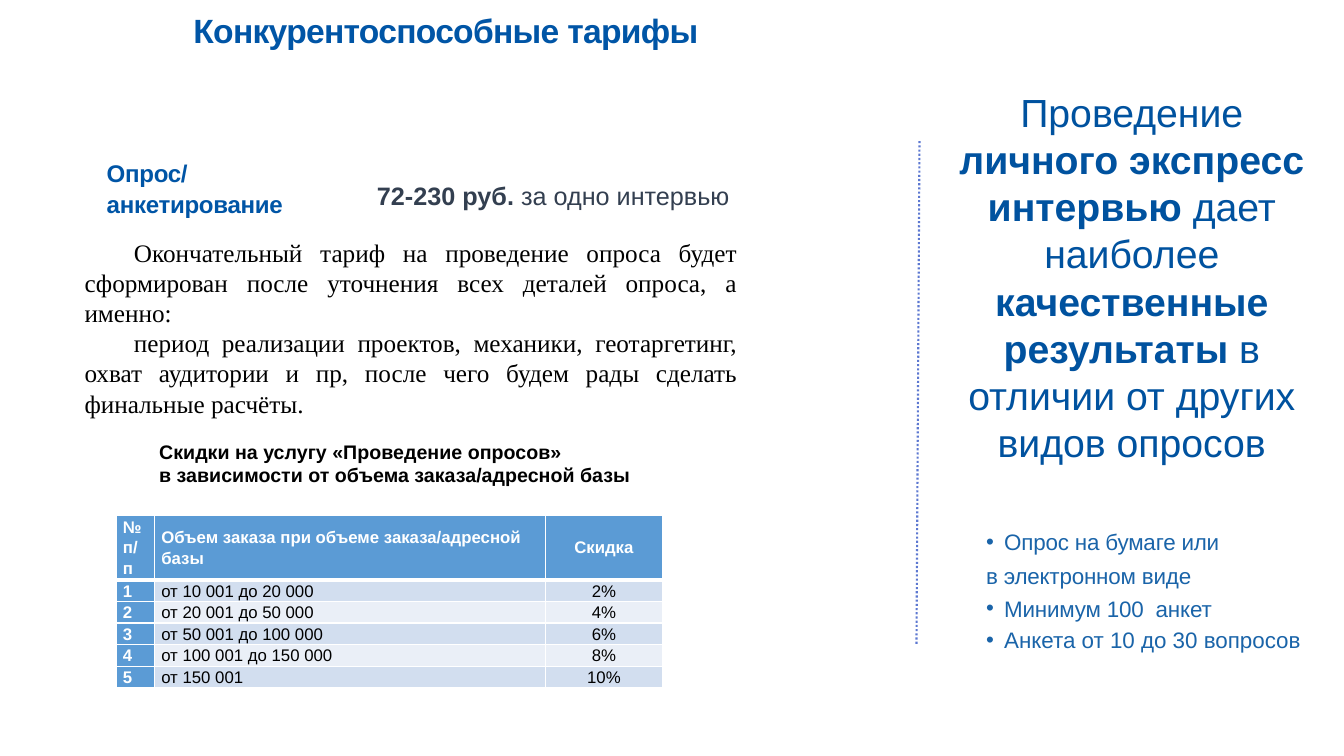
import pptx
import pptx.dml.color
import pptx.enum.dml
import pptx.enum.shapes
import pptx.enum.text
import pptx.oxml
import pptx.oxml.ns
import pptx.util
from dataclasses import dataclass

Inches = pptx.util.Inches
Pt = pptx.util.Pt
ALIGN = pptx.enum.text.PP_ALIGN
ANCHOR = pptx.enum.text.MSO_ANCHOR
NAMESPACE = pptx.oxml.ns.nsdecls("a")


@dataclass(frozen=True)
class Theme:
    sans: str = "Arial"
    serif: str = "Times New Roman"
    heading: str = "0055A6"
    claim: str = "00529F"
    bullet: str = "1A64A9"
    price: str = "333F50"
    ink: str = "000000"
    white: str = "FFFFFF"
    divider: str = "5D78D1"
    table_head: str = "5B9BD5"
    bands: tuple = ("D2DEEF", "EAEFF7")
    title_size: float = 24
    claim_size: float = 28
    body_size: float = 18
    service_size: float = 17.2
    bullet_size: float = 16
    caption_size: float = 14
    table_size: float = 12


def write(para, text, *, size, color, font=Theme.sans, bold=False, align=None,
          line=None, before=0, indent=0, first=0, bullet=False, tracking=0):
    """Fill a paragraph with a string or a list of (text, bold) spans."""
    properties = para._p.get_or_add_pPr()
    properties.set("marL", str(Inches(indent)))
    properties.set("indent", str(Inches(first)))
    if bullet:
        properties.append(pptx.oxml.parse_xml(f'<a:buFont {NAMESPACE} typeface="Arial"/>'))
        properties.append(pptx.oxml.parse_xml(f'<a:buChar {NAMESPACE} char="•"/>'))
    para.alignment = align
    para.line_spacing = line
    para.space_before = Pt(before)
    spans = [(text, bold)] if isinstance(text, str) else text
    for words, heavy in spans:
        span = para.add_run()
        span.text = words
        span.font.name = font
        span.font.size = Pt(size)
        span.font.bold = heavy
        span.font.color.rgb = pptx.dml.color.RGBColor.from_string(color)
        if tracking:
            span.font._element.set("spc", str(round(tracking * 100)))


class SlideBuilder:
    def __init__(self, slide, theme):
        self.slide = slide
        self.theme = theme

    def text(self, left, top, width, height, paragraphs, anchor=ANCHOR.TOP,
             margins=(0.1, 0.05), **style):
        """Each paragraph is its text, or a pair of text and own format."""
        box = self.slide.shapes.add_textbox(
            Inches(left), Inches(top), Inches(width), Inches(height))
        frame = box.text_frame
        frame.word_wrap = True
        frame.vertical_anchor = anchor
        frame.margin_left = frame.margin_right = Inches(margins[0])
        frame.margin_top = frame.margin_bottom = Inches(margins[1])
        for index, item in enumerate(paragraphs):
            para = frame.add_paragraph() if index else frame.paragraphs[0]
            text, own = item if isinstance(item, tuple) else (item, {})
            write(para, text, **{**style, **own})

    def dotted_line(self, start, end, color, width):
        line = self.slide.shapes.add_connector(
            pptx.enum.shapes.MSO_CONNECTOR.STRAIGHT,
            *(Inches(value) for value in (*start, *end)))
        line.line.color.rgb = pptx.dml.color.RGBColor.from_string(color)
        line.line.width = Pt(width)
        line.line.dash_style = pptx.enum.dml.MSO_LINE.ROUND_DOT
        line._element.spPr.append(pptx.oxml.parse_xml(f"<a:effectLst {NAMESPACE}/>"))

    def table(self, left, top, columns, heights, rows):
        table = self.slide.shapes.add_table(
            len(rows), len(columns), Inches(left), Inches(top),
            Inches(sum(columns)), Inches(sum(heights))).table
        for column, width in zip(table.columns, columns):
            column.width = Inches(width)
        for row, height in zip(table.rows, heights):
            row.height = Inches(height)
        for row, values in enumerate(rows):
            for column, value in enumerate(values):
                self.cell(table.cell(row, column), row, column, value)

    def cell(self, cell, row, column, value):
        theme = self.theme
        head = row == 0 or column == 0
        fill = theme.table_head if head else theme.bands[(row - 1) % 2]
        cell.fill.solid()
        cell.fill.fore_color.rgb = pptx.dml.color.RGBColor.from_string(fill)
        cell.vertical_anchor = ANCHOR.MIDDLE
        cell.margin_left = cell.margin_right = Inches(0.07)
        cell.margin_top = cell.margin_bottom = 0
        write(cell.text_frame.paragraphs[0], value, size=theme.table_size,
              color=theme.white if head else theme.ink, bold=head, line=1.07,
              align=ALIGN.CENTER if column == 2 else ALIGN.LEFT)
        # White borders, thicker under the header row
        widths = {"L": 1, "R": 1, "T": 3 if row == 1 else 1, "B": 3 if row == 0 else 1}
        properties = cell._tc.get_or_add_tcPr()
        for index, (side, width) in enumerate(widths.items()):
            properties.insert(index, pptx.oxml.parse_xml(
                f'<a:ln{side} {NAMESPACE} w="{Pt(width)}"><a:solidFill>'
                f'<a:srgbClr val="{theme.white}"/></a:solidFill></a:ln{side}>'))


def main():
    deck = pptx.Presentation()
    deck.slide_width, deck.slide_height = Inches(13.33), Inches(7.5)
    theme = Theme()
    page = SlideBuilder(deck.slides.add_slide(deck.slide_layouts[6]), theme)

    # Title
    page.text(1.82, 0.14, 10.82, 0.36, ["Конкурентоспособные тарифы"],
              anchor=ANCHOR.MIDDLE, size=theme.title_size, color=theme.heading,
              bold=True, line=0.9, tracking=-0.5)

    # Service and its price
    page.text(0.95, 1.53, 2.35, 0.69,
              ["Опрос/", ("анкетирование", {"before": 2.2})],
              size=theme.service_size, color=theme.heading, bold=True,
              line=Pt(19.9), indent=0.45, first=-0.44, tracking=-0.2)
    page.text(3.64, 1.74, 5.71, 0.4,
              [[("72-230 руб.", True), (" за одно интервью", False)]],
              size=theme.body_size, color=theme.price)

    # Tariff terms
    page.text(0.74, 2.3, 6.67, 1.92, [
        "Окончательный тариф на проведение опроса будет сформирован после "
        "уточнения всех деталей опроса, а именно:",
        "период реализации проектов, механики, геотаргетинг, охват аудитории "
        "и пр, после чего будем рады сделать финальные расчёты.",
    ], size=theme.body_size, color=theme.ink, font=theme.serif,
        align=ALIGN.JUSTIFY, first=0.49)

    # Discount table
    page.text(0.99, 4.32, 5.51, 0.55, [
        "Скидки на услугу «Проведение опросов»",
        "в зависимости от объема заказа/адресной базы",
    ], anchor=ANCHOR.MIDDLE, size=theme.caption_size, color=theme.ink,
        bold=True, first=0.49)
    page.table(1.15, 5.11, [0.38, 3.88, 1.16], [0.64] + [0.21] * 5, [
        ("№ п/п", "Объем заказа при объеме заказа/адресной базы", "Скидка"),
        ("1", "от 10 001 до 20 000", "2%"),
        ("2", "от 20 001 до 50 000", "4%"),
        ("3", "от 50 001 до 100 000", "6%"),
        ("4", "от 100 001 до 150 000", "8%"),
        ("5", "от 150 001", "10%"),
    ])

    # Divider and main claim
    page.dotted_line((9.12, 1.4), (9.09, 6.39), theme.divider, 1.5)
    page.text(9.29, 0.83, 3.87, 4.34, [[
        ("Проведение ", False),
        ("личного экспресс интервью ", True),
        ("дает наиболее ", False),
        ("качественные результаты", True),
        (" в отличии от других видов опросов", False),
    ]], size=theme.claim_size, color=theme.claim, align=ALIGN.CENTER)

    # Survey conditions
    item = {"indent": 0.19, "first": -0.18, "bullet": True}
    page.text(9.77, 5.23, 3.38, 1.59, [
        ("Опрос на бумаге или", {**item, "line": 1.0}),
        ("в электронном виде", {"indent": 0.01, "before": 0.9}),
        ("Минимум 100  анкет", item),
        ("Анкета от 10 до 30 вопросов",
         {**item, "line": 1.0, "before": 3.1, "tracking": 0}),
    ], margins=(0, 0.01), size=theme.bullet_size, color=theme.bullet,
        line=1.22, tracking=-0.1)

    deck.save("out.pptx")


if __name__ == "__main__":
    main()
